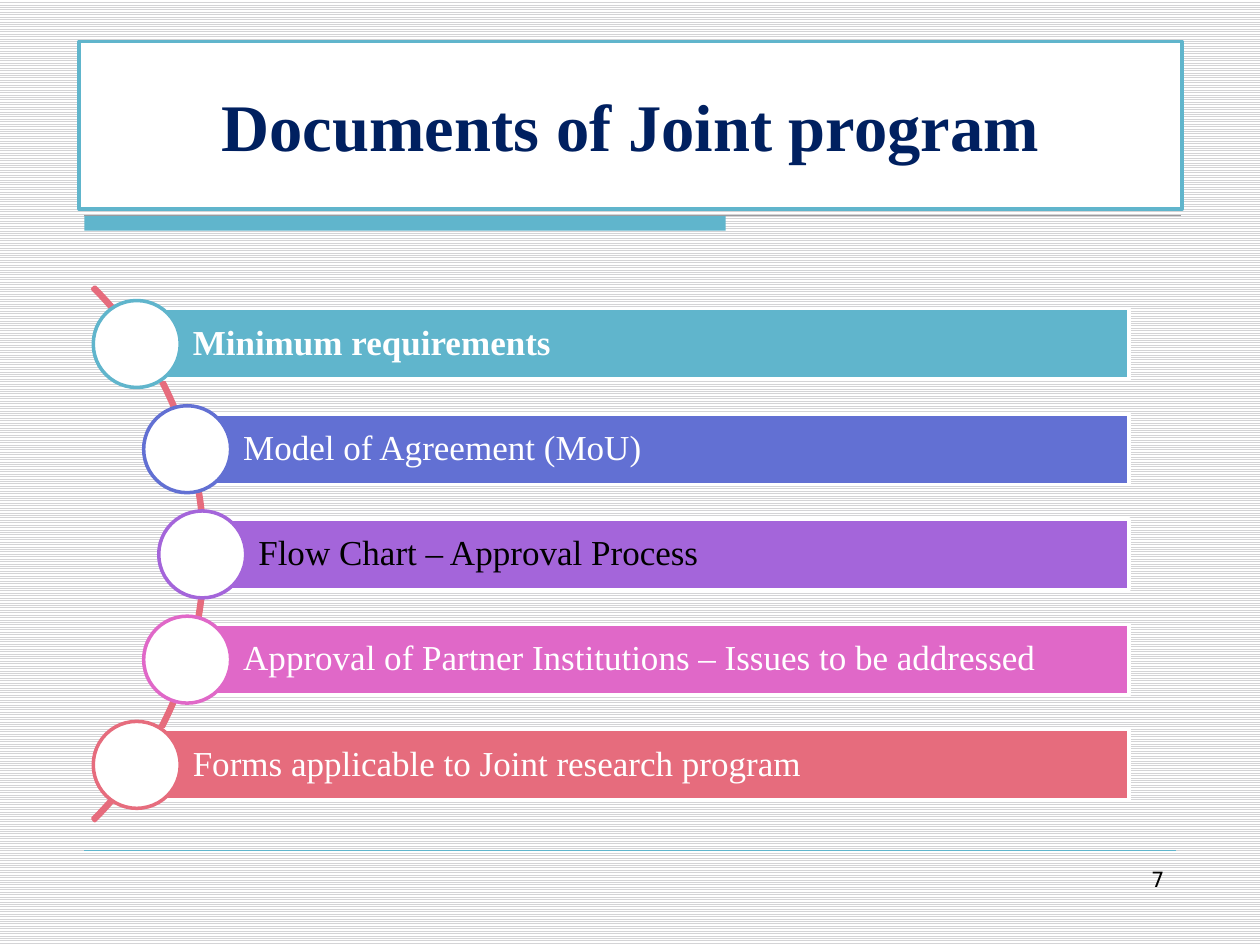
from pptx import Presentation
from pptx.dml.color import RGBColor
from pptx.enum.dml import MSO_PATTERN
from pptx.enum.shapes import MSO_CONNECTOR, MSO_SHAPE
from pptx.enum.text import MSO_ANCHOR as Anchor, PP_ALIGN as Align
from pptx.oxml.ns import qn
from pptx.util import Inches, Pt
from lxml import etree

COLORS = {
    "white": "FFFFFF", "black": "000000", "navy": "002060", "stripe": "D4D4D6",
    "rule": "9A9A9E", "teal": "60B5CC", "blue": "6270D3", "purple": "A465DA",
    "pink": "E068C8", "coral": "E66C7D",
}
DOCUMENTS = [
    ("Minimum requirements", "teal", 1.09, {"bold": True}),
    ("Model of Agreement (MoU)", "blue", 1.49, {}),
    ("Flow Chart – Approval Process", "purple", 1.61, {"color": "black"}),
    ("Approval of Partner Institutions – Issues to be addressed", "pink", 1.49, {}),
    ("Forms applicable to Joint research program", "coral", 1.09, {}),
]
BAR_TOP, BAR_PITCH, BAR_HEIGHT, BAR_RIGHT = 2.45, 0.835, 0.56, 8.96
CIRCLE_SIZE, CIRCLE_OFFSET = 0.69, 0.35


def rgb(name):
    return RGBColor.from_string(COLORS[name])


def write(shape, text, size=20, color="white", bold=False, font="Times New Roman",
          align=Align.LEFT, anchor=Anchor.MIDDLE, insets=(0.1, 0.05, 0.1, 0.05), spacing=1.0):
    frame = shape.text_frame
    frame.word_wrap = True
    frame.vertical_anchor = anchor
    (frame.margin_left, frame.margin_top,
     frame.margin_right, frame.margin_bottom) = map(Inches, insets)
    paragraph = frame.paragraphs[0]
    paragraph.alignment = align
    paragraph.line_spacing = spacing
    run = paragraph.add_run()
    run.text = text
    run.font.name, run.font.size, run.font.bold = font, Pt(size), bold
    run.font.color.rgb = rgb(color)


class SlideBuilder:
    """Holds the style and the current slide and adds each kind of element."""

    def __init__(self, slide):
        self.slide = slide

    def background(self, fore, back):
        fill = self.slide.background.fill
        fill.patterned()
        fill.pattern = MSO_PATTERN.LIGHT_HORIZONTAL
        fill.fore_color.rgb, fill.back_color.rgb = rgb(fore), rgb(back)

    def shape(self, kind, left, top, width, height, fill=None, line=None, weight=2):
        shape = self.slide.shapes.add_shape(kind, *map(Inches, (left, top, width, height)))
        shape.shadow.inherit = False
        for part, color in ((shape.fill, fill), (shape.line.fill, line)):
            if color:
                part.solid()
                part.fore_color.rgb = rgb(color)
            else:
                part.background()
        if line:
            shape.line.width = Pt(weight)
        return shape

    def rule(self, left, right, y, color, weight):
        rule = self.slide.shapes.add_connector(
            MSO_CONNECTOR.STRAIGHT, *map(Inches, (left, y, right, y)))
        rule.line.color.rgb = rgb(color)
        rule.line.width = Pt(weight)
        etree.SubElement(rule.line._get_or_add_ln().getparent(), qn("a:effectLst"))

    def text(self, left, top, width, height, text, **style):
        box = self.slide.shapes.add_textbox(*map(Inches, (left, top, width, height)))
        write(box, text, **style)

    def document(self, index, text, color, left, style):
        top = BAR_TOP + index * BAR_PITCH
        bar = self.shape(MSO_SHAPE.RECTANGLE, left, top, BAR_RIGHT - left, BAR_HEIGHT,
                         fill=color, line="white")
        write(bar, text, insets=(0.44, 0.06, 0.06, 0.06), spacing=0.9, **style)
        self.shape(MSO_SHAPE.OVAL, left - CIRCLE_OFFSET, top - (CIRCLE_SIZE - BAR_HEIGHT) / 2,
                   CIRCLE_SIZE, CIRCLE_SIZE, fill="white", line=color)


def main():
    deck = Presentation()
    deck.slide_width, deck.slide_height = Inches(10), Inches(7.5)
    builder = SlideBuilder(deck.slides.add_slide(deck.slide_layouts[6]))
    builder.background("stripe", "white")
    builder.shape(MSO_SHAPE.RECTANGLE, 0.67, 1.71, 5.09, 0.12, fill="teal")
    builder.rule(0.67, 9.37, 1.71, "rule", 0.75)
    builder.rule(0.67, 9.33, 6.75, "teal", 0.25)

    title = builder.shape(MSO_SHAPE.RECTANGLE, 0.63, 0.33, 8.75, 1.33,
                          fill="white", line="teal", weight=2.25)
    write(title, "Documents of Joint program", size=38, color="navy", bold=True,
          align=Align.CENTER)
    builder.text(7.17, 6.83, 2.17, 0.52, "7", size=12, color="black", font="DejaVu Sans",
                 align=Align.RIGHT, anchor=Anchor.TOP)

    arc = builder.shape(MSO_SHAPE.BLOCK_ARC, -4.36, 1.4, 5.99, 5.99, line="coral")
    for index, value in enumerate((189, 27, 0.004)):
        arc.adjustments[index] = value
    for index, document in enumerate(DOCUMENTS):
        builder.document(index, *document)
    deck.save("out.pptx")


if __name__ == "__main__":
    main()
